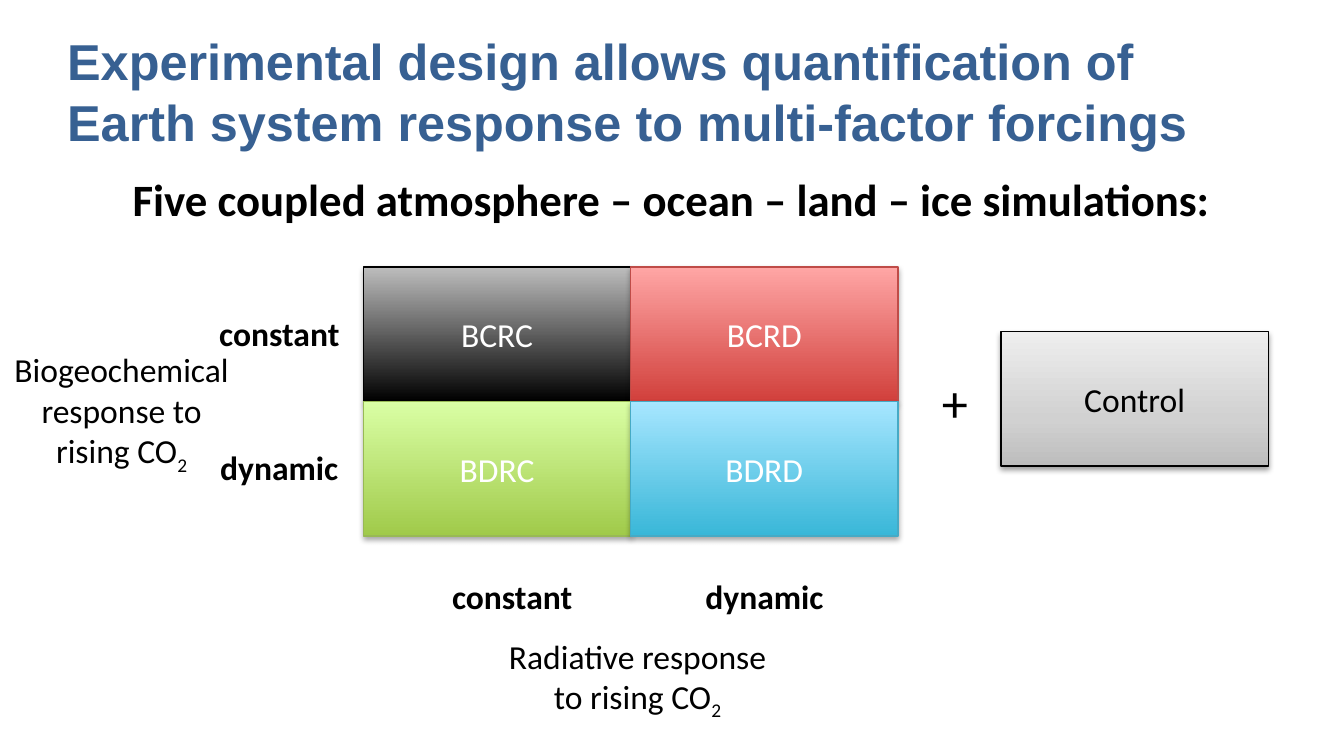
import copy

import pptx
import pptx.dml.color
import pptx.enum.shapes
import pptx.enum.text
import pptx.oxml
import pptx.oxml.ns
import pptx.util
from pptx.util import Cm

ALIGN = pptx.enum.text.PP_ALIGN
ANCHOR = pptx.enum.text.MSO_ANCHOR
CELL_WIDTH, CELL_HEIGHT = 5.05, 2.54
CELLS = [
    [("BCRC", ["000000", "BDBDBD"], "000000"), ("BCRD", ["D1403C", "FFA6A5"], "BF4C48")],
    [("BDRC", ["A0CA4A", "DAFFA5"], "98B955"), ("BDRD", ["39B7D8", "A7E6FF"], "46AAC5")],
]
LEVELS = ["constant", "dynamic"]


def color(value):
    return pptx.dml.color.RGBColor.from_string(value)


def add_run(paragraph, text, size=18, ink="000000", bold=False, font="Calibri"):
    run = paragraph.add_run()
    run.text = text
    run.font.name = font
    run.font.size = pptx.util.Pt(size)
    run.font.bold = bold
    run.font.color.rgb = color(ink)
    return run


def add_text(slide, box, text, subscript="", align=ALIGN.CENTER, **style):
    shape = slide.shapes.add_textbox(*map(Cm, box))
    shape.text_frame.word_wrap = True
    paragraph = shape.text_frame.paragraphs[0]
    paragraph.alignment = align
    add_run(paragraph, text, **style)
    if subscript:
        run = add_run(paragraph, subscript, **style)
        run._r.get_or_add_rPr().set("baseline", "-25000")
    return shape


def add_shadow(shape, opacity, distance):
    shape.shadow.inherit = False
    effects = shape._element.spPr.find(pptx.oxml.ns.qn("a:effectLst"))
    effects.append(pptx.oxml.parse_xml(
        f'<a:outerShdw {pptx.oxml.ns.nsdecls("a")} blurRad="{pptx.util.Pt(3.1)}" '
        f'dist="{pptx.util.Pt(distance)}" dir="5400000" rotWithShape="0">'
        f'<a:srgbClr val="000000"><a:alpha val="{opacity * 1000}"/></a:srgbClr></a:outerShdw>'))


def set_gradient(shape, colors, positions):
    shape.fill.gradient()
    shape.fill.gradient_angle = 90
    stops = shape._element.spPr.find(".//" + pptx.oxml.ns.qn("a:gsLst"))
    for _ in colors[2:]:
        stops.append(copy.deepcopy(stops[-1]))
    for stop, value, position in zip(shape.fill.gradient_stops, colors, positions):
        stop.color.rgb = color(value)
        stop.position = position


def add_block(slide, left, top, text, colors, outline, ink="FFFFFF",
              positions=(0, 1), opacity=35, distance=1.8):
    shape = slide.shapes.add_shape(
        pptx.enum.shapes.MSO_SHAPE.RECTANGLE, Cm(left), Cm(top), Cm(CELL_WIDTH), Cm(CELL_HEIGHT))
    set_gradient(shape, colors, positions)
    shape.line.color.rgb = color(outline)
    shape.line.width = pptx.util.Pt(0.75)
    add_shadow(shape, opacity, distance)
    shape.text_frame.vertical_anchor = ANCHOR.MIDDLE
    paragraph = shape.text_frame.paragraphs[0]
    paragraph.alignment = ALIGN.CENTER
    add_run(paragraph, text, ink=ink)


def add_heading(slide, left, top, width):
    title = add_text(
        slide, (left, top, width, 2.29),
        "Experimental design allows quantification of Earth system response to multi-factor forcings",
        align=ALIGN.LEFT, size=27, ink="376092", bold=True, font="Arial")
    frame = title.text_frame
    frame.vertical_anchor = ANCHOR.BOTTOM
    frame.margin_left = frame.margin_right = frame.margin_top = frame.margin_bottom = 0
    frame.paragraphs[0].line_spacing = pptx.util.Pt(33)
    add_text(slide, (left - 1.07, top + 2.54, width + 2.11, 1.27),
             "Five coupled atmosphere – ocean – land – ice simulations:", size=24, bold=True)


def add_matrix(slide, left, top):
    for row, cells in enumerate(CELLS):
        for column, (text, colors, outline) in enumerate(cells):
            add_block(slide, left + column * CELL_WIDTH, top + row * CELL_HEIGHT,
                      text, colors, outline)
    for index, level in enumerate(LEVELS):
        add_text(slide, (left - 3.37, top + 0.74 + index * CELL_HEIGHT, 3.56, 1.02),
                 level, bold=True)
        add_text(slide, (left + 1.03 + index * 4.77, top + 5.72, 3.56, 1.02), level, bold=True)
    add_text(slide, (left - 6.87, top + 1.43, 4.6, 2.57),
             "Biogeochemical response to rising CO", "2")
    add_text(slide, (left + 2.4, top + 6.84, 5.56, 1.8),
             "Radiative response to rising CO", "2")


def add_control(slide, left, top):
    add_text(slide, (left, top + 0.61, 0.81, 1.45), "+", align=ALIGN.LEFT, size=28)
    add_block(slide, left + 1.37, top, "Control", ["BDBDBD", "D1D1D1", "EEEEEE"], "000000",
              ink="000000", positions=(0, 0.35, 1), opacity=38, distance=1.6)


def main():
    presentation = pptx.Presentation()
    presentation.slide_width = Cm(25.4)
    presentation.slide_height = Cm(14.29)
    slide = presentation.slides.add_slide(presentation.slide_layouts[6])
    add_heading(slide, 1.27, 0.58, 22.86)
    add_matrix(slide, 6.87, 5.05)
    add_control(slide, 17.55, 6.27)
    presentation.save("out.pptx")


if __name__ == "__main__":
    main()
